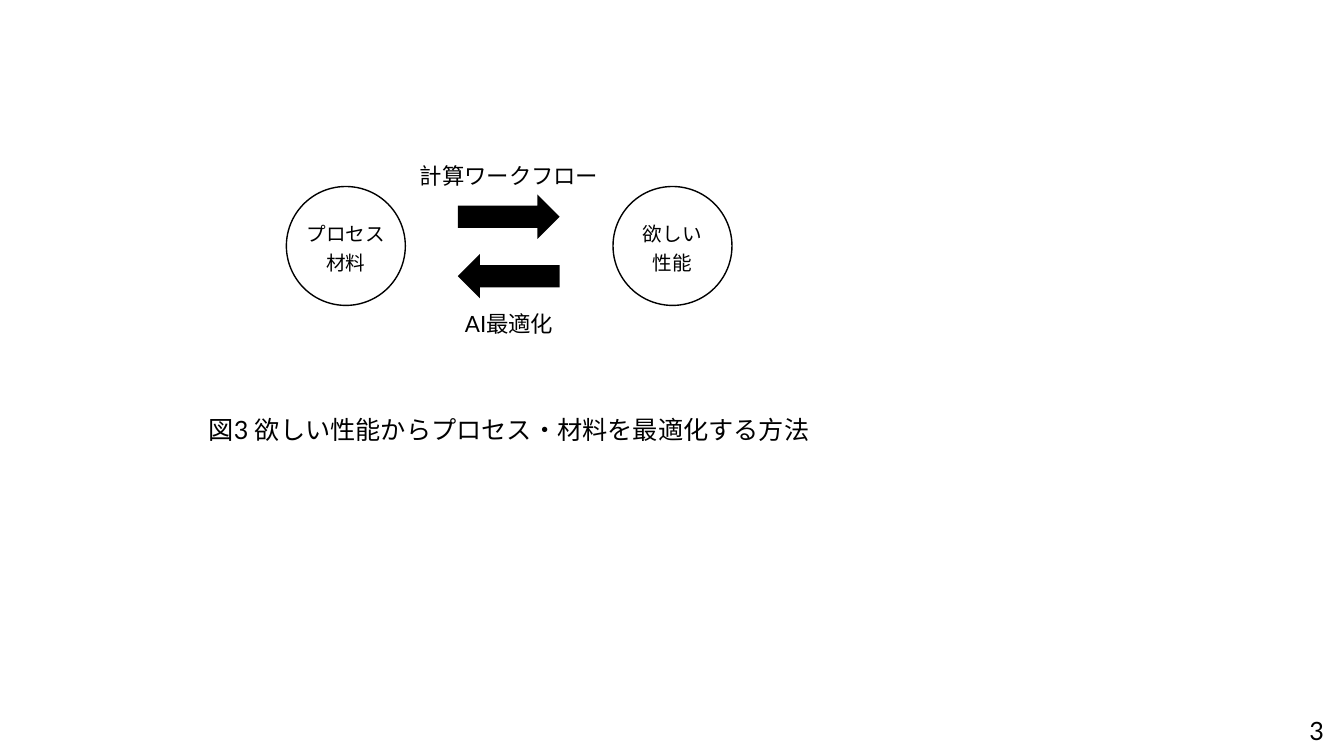
import pptx
import pptx.util
import pptx.dml.color
import pptx.enum.shapes
import pptx.enum.text

Inches, Pt = pptx.util.Inches, pptx.util.Pt
SHAPE = pptx.enum.shapes.MSO_SHAPE
ALIGN = pptx.enum.text.PP_ALIGN
ANCHOR = pptx.enum.text.MSO_ANCHOR
FIT = pptx.enum.text.MSO_AUTO_SIZE

# Content
COLORS = {"ink": "000000", "paper": "FFFFFF"}
FONT = "Lato"
NODES = [["プロセス", "材料"], ["欲しい", "性能"]]
TURNS = [0, 180]
# text, box, size, alignment, anchor, wrap, autofit
LABELS = [
    ("計算ワークフロー", (4.05, 1.56, 2, 0.37), 16, ALIGN.CENTER,
     ANCHOR.TOP, False, FIT.SHAPE_TO_FIT_TEXT),
    ("AI最適化", (4.51, 3.03, 1.08, 0.37), 16, ALIGN.CENTER,
     ANCHOR.TOP, True, FIT.SHAPE_TO_FIT_TEXT),
    ("図3 欲しい性能からプロセス・材料を最適化する方法",
     (1.97, 4.06, 6.22, 0.4), 18, ALIGN.LEFT,
     ANCHOR.TOP, False, FIT.SHAPE_TO_FIT_TEXT),
    ("3", (12.29, 7.05, 0.94, 0.4), 18, ALIGN.RIGHT,
     ANCHOR.MIDDLE, True, FIT.NONE),
]

# Layout in inches
NODE_X, NODE_Y, NODE_D, NODE_STEP = 2.84, 1.85, 1.18, 3.24
ARROW_X, ARROW_Y, ARROW_W, ARROW_H, ARROW_STEP = 4.54, 1.93, 1.01, 0.44, 0.59


def color(name):
    return pptx.dml.color.RGBColor.from_string(COLORS[name])


def apply(item, values):
    for key, value in values.items():
        setattr(item, key, value)


def write(shape, lines, size, align, frame, space=None):
    text = shape.text_frame
    apply(text, frame)
    for i, line in enumerate(lines):
        para = text.paragraphs[0] if i == 0 else text.add_paragraph()
        apply(para, {"alignment": align, "line_spacing": space})
        run = para.add_run()
        run.text = line
        apply(run.font, {"name": FONT, "size": Pt(size)})
        run.font.color.rgb = color("ink")


def draw(slide, kind, box, fill):
    shape = slide.shapes.add_shape(kind, *map(Inches, box))
    shape.shadow.inherit = False
    shape.fill.solid()
    shape.fill.fore_color.rgb = color(fill)
    return shape


def main():
    deck = pptx.Presentation()
    apply(deck, {"slide_width": Inches(13.33), "slide_height": Inches(7.5)})
    slide = deck.slides.add_slide(deck.slide_layouts[6])

    # Circles
    for i, lines in enumerate(NODES):
        box = (NODE_X + i * NODE_STEP, NODE_Y, NODE_D, NODE_D)
        node = draw(slide, SHAPE.OVAL, box, "paper")
        node.line.color.rgb = color("ink")
        node.line.width = Pt(1)
        frame = {"word_wrap": False, "vertical_anchor": ANCHOR.MIDDLE}
        write(node, lines, 14, ALIGN.CENTER, frame, 1.2)

    # Arrows there and back
    for i, turn in enumerate(TURNS):
        box = (ARROW_X, ARROW_Y + i * ARROW_STEP, ARROW_W, ARROW_H)
        arrow = draw(slide, SHAPE.RIGHT_ARROW, box, "ink")
        arrow.line.fill.background()
        arrow.rotation = turn

    # Labels, caption and page number
    for text, box, size, align, anchor, wrap, fit in LABELS:
        label = slide.shapes.add_textbox(*map(Inches, box))
        frame = {"word_wrap": wrap, "auto_size": fit,
                 "vertical_anchor": anchor}
        write(label, [text], size, align, frame)

    deck.save("out.pptx")


if __name__ == "__main__":
    main()
